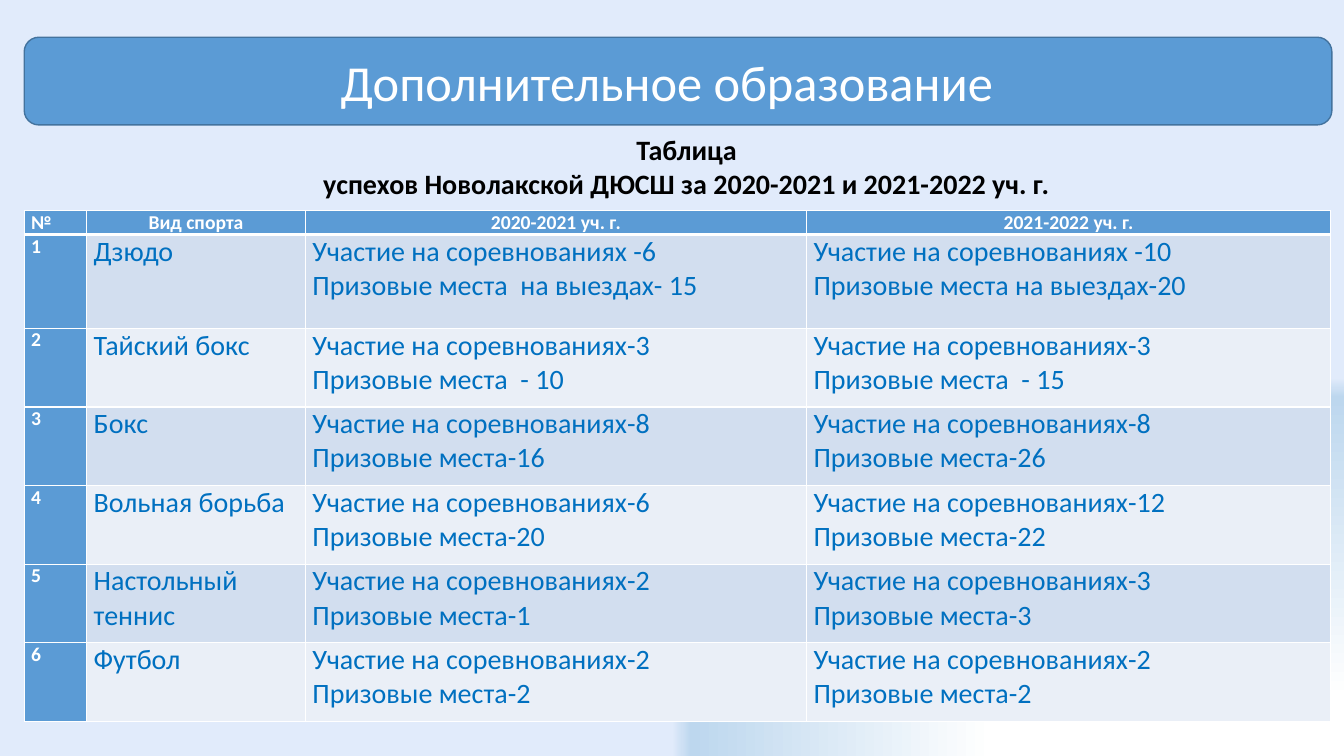
from lxml import etree
from pptx import Presentation, util as u
from pptx.dml.color import RGBColor
from pptx.enum import shapes, text
from pptx.oxml import ns

WIDTH, HEIGHT = u.Inches(13.333), u.Inches(7.5)
WHITE = RGBColor(0xFF, 0xFF, 0xFF)
BLACK = RGBColor(0x00, 0x00, 0x00)
BLUE = RGBColor(0x5B, 0x9B, 0xD5)
OUTLINE = RGBColor(0x43, 0x73, 0x9E)
TEXT_BLUE = RGBColor(0x00, 0x70, 0xC0)
BANDS = RGBColor(0xD2, 0xDE, 0xEF), RGBColor(0xEA, 0xEF, 0xF7)
SKY = ((15, WHITE), (95, RGBColor(0xBD, 0xD7, 0xEE)), (100, RGBColor(0xE1, 0xEB, 0xFB)))

TITLE_FONT = {"size": u.Pt(36), "bold": False, "color": WHITE}
CAPTION_FONT = {"size": u.Pt(20), "bold": True, "color": BLACK}
HEAD_FONT = {"size": u.Pt(14), "bold": True, "color": WHITE}
BODY_FONT = {"size": u.Pt(20), "bold": False, "color": TEXT_BLUE}

LEFT, SPAN = 1.8, 97.3
COLUMNS = (4.65, 16.28, 37.28, 39.01)
ROWS = (2.8, 12.4) + (10.4,) * 5
HEADERS = ("№", "Вид спорта", "2020-2021 уч. г.", "2021-2022 уч. г.")
ENTRIES, PRIZES = "Участие на соревнованиях", "Призовые места"
RESULTS = (
    ("Дзюдо", (" -6", "  на выездах- 15"), (" -10", " на выездах-20")),
    ("Тайский бокс", ("-3", "  - 10"), ("-3", "  - 15")),
    ("Бокс", ("-8", "-16"), ("-8", "-26")),
    ("Вольная борьба", ("-6", "-20"), ("-12", "-22")),
    ("Настольный теннис", ("-2", "-1"), ("-3", "-3")),
    ("Футбол", ("-2", "-2"), ("-2", "-2")),
)


def across(share):
    return round(WIDTH * share / 100)


def down(share):
    return round(HEIGHT * share / 100)


def area(left, top, width, height):
    return across(left), down(top), across(width), down(height)


def apply(target, values):
    for name, value in values.items():
        setattr(target, name, value)


def write(frame, lines, font, align):
    for index, line in enumerate(lines):
        para = frame.add_paragraph() if index else frame.paragraphs[0]
        para.alignment = align
        span = para.add_run()
        span.text = line
        for name, value in {"name": "Calibri", **font}.items():
            if name == "color":
                span.font.color.rgb = value
            else:
                setattr(span.font, name, value)


def paint_background(page):
    fill = page.background.fill
    fill.gradient()
    gradient = page.background._cSld.find(".//" + ns.qn("a:gradFill"))
    for child in list(gradient):
        gradient.remove(child)
    stops = etree.SubElement(gradient, ns.qn("a:gsLst"))
    for position, color in SKY:
        stop = etree.SubElement(stops, ns.qn("a:gs"), pos=str(position * 1000))
        etree.SubElement(stop, ns.qn("a:srgbClr"), val=str(color))
    route = etree.SubElement(gradient, ns.qn("a:path"))
    route.set("path", "rect")
    etree.SubElement(route, ns.qn("a:fillToRect"), l="100000", t="100000")


def add_title(page):
    band = page.shapes.add_shape(
        shapes.MSO_SHAPE.ROUNDED_RECTANGLE, *area(LEFT, 4.93, SPAN, 11.6))
    band.shadow.inherit = False
    band.fill.solid()
    band.fill.fore_color.rgb = BLUE
    band.line.color.rgb = OUTLINE
    band.line.width = u.Pt(1)
    title = page.shapes.title
    band._element.addnext(title._element)
    places = area(20.86, 6, 57.54, 9.47)
    apply(title, dict(zip(("left", "top", "width", "height"), places)))
    apply(title.text_frame, {"word_wrap": True, "vertical_anchor": text.MSO_ANCHOR.MIDDLE,
                             "auto_size": text.MSO_AUTO_SIZE.NONE})
    write(title.text_frame, ["Дополнительное образование"], TITLE_FONT, text.PP_ALIGN.CENTER)


def add_caption(page):
    box = page.shapes.add_textbox(*area(3.08, 13.6, 96.02, 17.47))
    apply(box.text_frame, {"word_wrap": True, "vertical_anchor": text.MSO_ANCHOR.MIDDLE,
                           "margin_bottom": u.Inches(0.1)})
    lines = ["Таблица", "успехов Новолакской ДЮСШ за 2020-2021 и 2021-2022 уч. г."]
    write(box.text_frame, lines, CAPTION_FONT, text.PP_ALIGN.CENTER)


def add_borders(cell, widths):
    properties = cell._tc.get_or_add_tcPr()
    for index, (side, width) in enumerate(zip("LRTB", widths)):
        border = etree.Element(ns.qn("a:ln" + side), w=str(u.Pt(width)))
        fill = etree.SubElement(border, ns.qn("a:solidFill"))
        etree.SubElement(fill, ns.qn("a:srgbClr"), val=str(WHITE))
        properties.insert(index, border)


def fill_cell(cell, lines, font, color, align, widths):
    apply(cell, {"margin_left": u.Inches(0.07), "margin_right": u.Inches(0.07),
                 "margin_top": 0, "margin_bottom": 0})
    write(cell.text_frame, lines, font, align)
    cell.fill.solid()
    cell.fill.fore_color.rgb = color
    add_borders(cell, widths)


def add_results(page):
    table = page.shapes.add_table(
        len(ROWS), len(COLUMNS), *area(LEFT, 27.87, SPAN, sum(ROWS))).table
    for column, share in zip(table.columns, COLUMNS):
        column.width = across(share)
    for row, share in zip(table.rows, ROWS):
        row.height = down(share)
    for index, header in enumerate(HEADERS):
        align = text.PP_ALIGN.CENTER if index else text.PP_ALIGN.LEFT
        fill_cell(table.cell(0, index), [header], HEAD_FONT, BLUE, align, (1, 1, 1, 3))
    for number, (sport, *seasons) in enumerate(RESULTS, 1):
        scores = [[ENTRIES + entries, PRIZES + prizes] for entries, prizes in seasons]
        widths = (1, 1, 3 if number == 1 else 1, 1)
        for index, lines in enumerate([[str(number)], [sport], *scores]):
            font = BODY_FONT if index else HEAD_FONT
            color = BANDS[(number - 1) % 2] if index else BLUE
            fill_cell(table.cell(number, index), lines, font, color,
                      text.PP_ALIGN.LEFT, widths)


def main():
    deck = Presentation()
    apply(deck, {"slide_width": WIDTH, "slide_height": HEIGHT})
    page = deck.slides.add_slide(deck.slide_layouts.get_by_name("Title Only"))
    paint_background(page)
    add_title(page)
    add_results(page)
    add_caption(page)
    deck.save("out.pptx")


if __name__ == "__main__":
    main()
